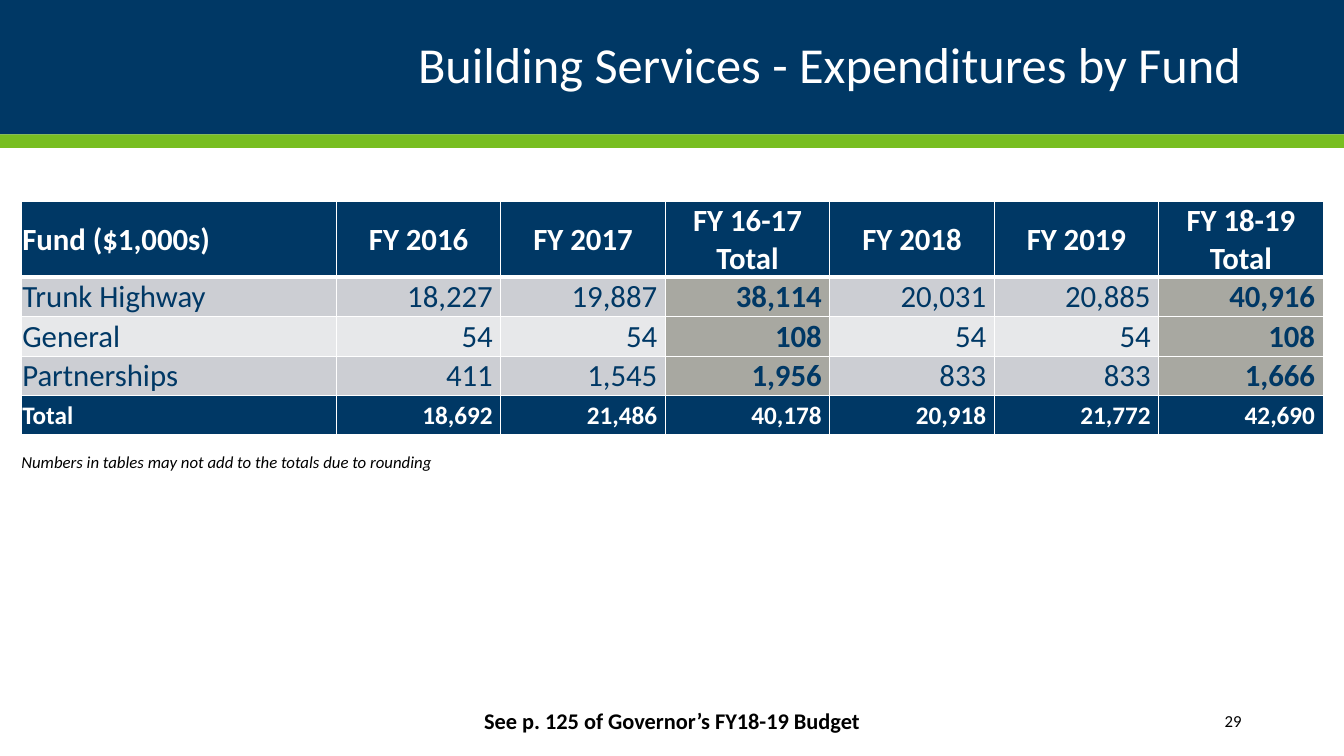
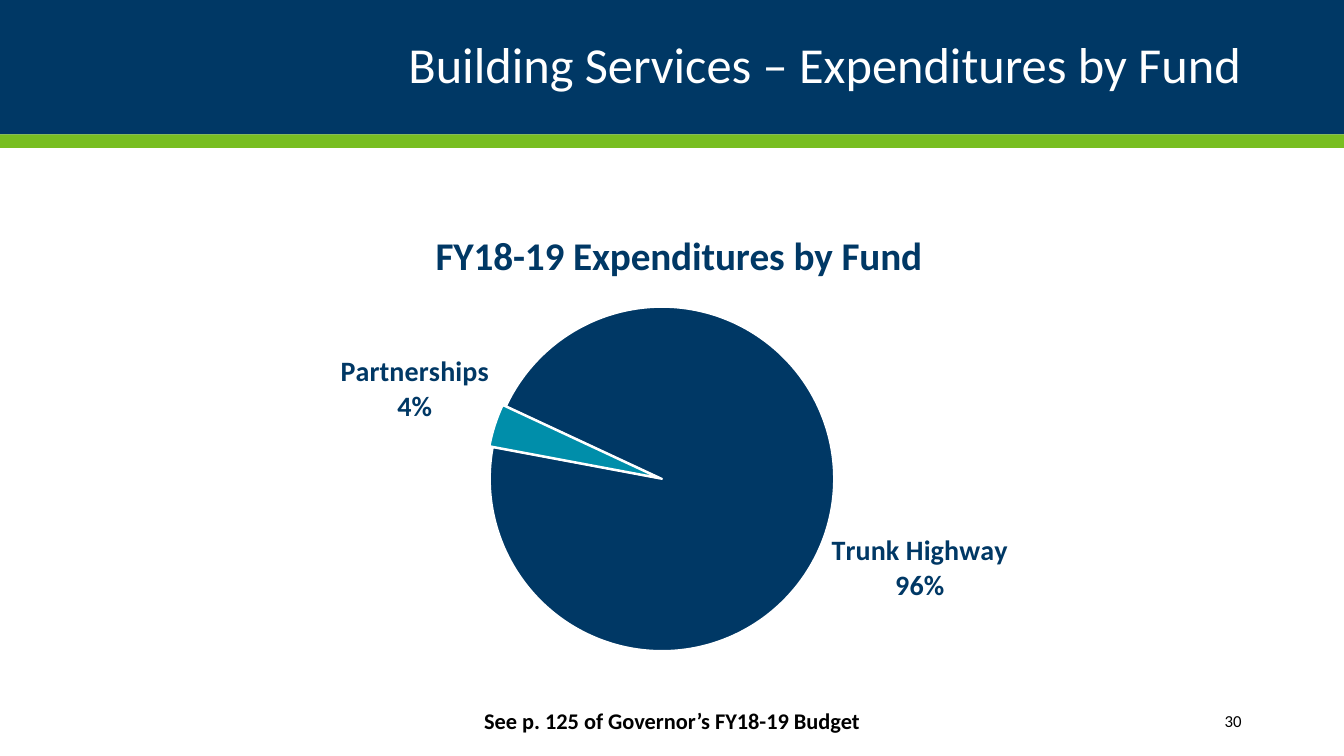
from lxml import etree
from pptx import Presentation
from pptx.chart.data import CategoryChartData
from pptx.dml.color import RGBColor
from pptx.enum.chart import XL_CHART_TYPE, XL_LABEL_POSITION
from pptx.enum.shapes import MSO_SHAPE
from pptx.enum.text import MSO_ANCHOR, PP_ALIGN
from pptx.oxml import parse_xml
from pptx.oxml.ns import nsdecls, qn
from pptx.util import Inches, Pt

PIE = XL_CHART_TYPE.PIE
OUTSIDE_END = XL_LABEL_POSITION.OUTSIDE_END
RECTANGLE = MSO_SHAPE.RECTANGLE
MIDDLE = MSO_ANCHOR.MIDDLE
LEFT, CENTER, RIGHT = PP_ALIGN.LEFT, PP_ALIGN.CENTER, PP_ALIGN.RIGHT

COLORS = {
    "navy": "003865", "green": "78BE21", "teal": "008EAA",
    "white": "FFFFFF", "black": "000000",
    "stripe_dark": "CCCED3", "stripe_light": "E7E8EA", "subtotal": "A8A8A1",
}
FONT = "Calibri"
COLUMNS, ROWS = 80, 45
UNIT = Inches(1) / 6

TITLE_BAND = (0, 0, COLUMNS, 8)
ACCENT_BAND = (0, 8, COLUMNS, 0.8)
TITLE_BOX = (5.5, 1, 69, 6)
SOURCE_BOX = (21.67, 41.7, 36.67, 2.4)
NUMBER_BOX = (64.9, 41.7, 9.6, 2.4)
TABLE_BOX = (1.27, 12, 77.5, 13.9)
NOTE_BOX = (0, 26.28, 27, 2.4)
CHART_BOX = (5.5, 12.06, 69, 28.56)

HEADER = ["Fund ($1,000s)", "FY 2016", "FY 2017", "FY 16-17 Total",
          "FY 2018", "FY 2019", "FY 18-19 Total"]
FUNDS = [
    ["Trunk Highway", "18,227", "19,887", "38,114", "20,031", "20,885", "40,916"],
    ["General", "54", "54", "108", "54", "54", "108"],
    ["Partnerships", "411", "1,545", "1,956", "833", "833", "1,666"],
]
TOTAL = ["Total", "18,692", "21,486", "40,178", "20,918", "21,772", "42,690"]
SUBTOTAL_COLUMNS = (3, 6)
FUND_SHARES = {"Trunk Highway": 96, "General": 0, "Partnerships": 4}
SLICE_COLORS = ("navy", "green", "teal")


def units(*lengths):
    return [round(length * UNIT) for length in lengths]


def rgb(name):
    return RGBColor.from_string(COLORS[name])


def style_font(font, size, color="navy", bold=False, italic=False):
    font.name, font.size = FONT, Pt(size)
    font.bold, font.italic = bold, italic
    font.color.rgb = rgb(color)


def write(frame, text, align=LEFT, spacing=None, **style):
    paragraph = frame.paragraphs[0]
    paragraph.alignment = align
    if spacing:
        paragraph.line_spacing = spacing
    run = paragraph.add_run()
    run.text = text
    style_font(run.font, **style)


def add_text(slide, box, text, **style):
    frame = slide.shapes.add_textbox(*units(*box)).text_frame
    frame.word_wrap = True
    frame.vertical_anchor = MIDDLE
    write(frame, text, **style)


def add_band(slide, box, color):
    band = slide.shapes.add_shape(RECTANGLE, *units(*box))
    band.shadow.inherit = False
    band.fill.solid()
    band.fill.fore_color.rgb = rgb(color)
    band.line.fill.background()


def add_frame(presentation, title, number):
    slide = presentation.slides.add_slide(presentation.slide_layouts[6])
    add_band(slide, TITLE_BAND, "navy")
    add_band(slide, ACCENT_BAND, "green")
    add_text(slide, TITLE_BOX, title, align=RIGHT, spacing=0.9, size=36, color="white")
    add_text(slide, SOURCE_BOX, "See p. 125 of Governor’s FY18-19 Budget",
             align=CENTER, size=16, color="black", bold=True)
    add_text(slide, NUMBER_BOX, number, align=RIGHT, size=12, color="black")
    return slide


def set_borders(cell, **widths):
    properties = cell._tc.get_or_add_tcPr()
    for side in ("L", "R", "T", "B"):
        line = etree.SubElement(properties, qn(f"a:ln{side}"), w=str(Pt(widths.get(side, 1))))
        fill = etree.SubElement(line, qn("a:solidFill"))
        etree.SubElement(fill, qn("a:srgbClr"), val=COLORS["white"])


def fill_cell(cell, text, fill, right_margin, borders, **style):
    cell.margin_left = cell.margin_top = Inches(0.01)
    cell.margin_right, cell.margin_bottom = Inches(right_margin), 0
    cell.vertical_anchor = MIDDLE
    set_borders(cell, **borders)
    cell.fill.solid()
    cell.fill.fore_color.rgb = rgb(fill)
    write(cell.text_frame, text, **style)


def add_fund_table(slide, box):
    records = [HEADER, *FUNDS, TOTAL]
    last = len(records) - 1
    table = slide.shapes.add_table(len(records), len(HEADER), *units(*box)).table
    label_width, header_height = 0.242 * box[2], 0.324 * box[3]
    value_width = (box[2] - label_width) / (len(HEADER) - 1)
    row_height = (box[3] - header_height) / last
    for index, column in enumerate(table.columns):
        column.width = units(value_width if index else label_width)[0]
    for index, row in enumerate(table.rows):
        row.height = units(row_height if index else header_height)[0]
    for row, record in enumerate(records):
        banner = row in (0, last)
        borders = {0: {"B": 3}, 1: {"T": 3}}.get(row, {})
        for column, text in enumerate(record):
            subtotal = column in SUBTOTAL_COLUMNS
            stripe = "stripe_dark" if row % 2 else "stripe_light"
            align = LEFT if column == 0 else RIGHT if row else CENTER
            fill_cell(table.cell(row, column), text,
                      fill="navy" if banner else "subtotal" if subtotal else stripe,
                      right_margin=0.08 if align == RIGHT else 0.01,
                      borders=borders, align=align,
                      size=18 if row == last else 22,
                      color="white" if banner else "navy",
                      bold=banner or subtotal)


def set_layout(element, position, inner=False, **shares):
    for layout in element.findall(qn("c:layout")):
        element.remove(layout)
    target = '<c:layoutTarget val="inner"/>' if inner else ""
    modes = "".join(f'<c:{key}Mode val="edge"/>' for key in ("x", "y"))
    sizes = "".join(f'<c:{key} val="{value}"/>' for key, value in shares.items())
    element.insert(position, parse_xml(
        f'<c:layout {nsdecls("c")}><c:manualLayout>{target}{modes}{sizes}'
        "</c:manualLayout></c:layout>"))


def label_slices(series):
    labels = series.data_labels
    labels.show_value = False
    labels.show_category_name = labels.show_percentage = True
    labels.number_format, labels.number_format_is_linked = "0%", False
    labels.position = OUTSIDE_END
    style_font(labels.font, size=20, bold=True)
    element = series._element.find(qn("c:dLbls"))
    separator = etree.Element(qn("c:separator"))
    separator.text = "\n"
    element.find(qn("c:showBubbleSize")).addnext(separator)
    element.insert(0, parse_xml(
        f'<c:dLbl {nsdecls("c")}><c:idx val="1"/><c:delete val="1"/></c:dLbl>'))


def add_fund_pie(slide, box):
    data = CategoryChartData()
    data.categories = list(FUND_SHARES)
    data.add_series("Series 1", list(FUND_SHARES.values()))
    chart = slide.shapes.add_chart(PIE, *units(*box), data).chart
    style_font(chart.font, size=10)
    chart.has_legend = False
    chart.has_title = True
    write(chart.chart_title.text_frame, "FY18-19 Expenditures by Fund",
          align=CENTER, size=28, bold=True)
    set_layout(chart.chart_title._element, 1, x=0.29, y=0.04)
    plot = chart.plots[0]
    plot.vary_by_categories = True
    set_layout(plot._element.getparent(), 0, inner=True, x=0.34, y=0.21, w=0.3, h=0.73)
    series = plot.series[0]
    for index, color in enumerate(SLICE_COLORS):
        slice_format = series.points[index].format
        slice_format.fill.solid()
        slice_format.fill.fore_color.rgb = rgb(color)
        slice_format.line.color.rgb = rgb("white")
        slice_format.line.width = Pt(1.5)
    label_slices(series)
    explosion = etree.Element(qn("c:explosion"), val="1")
    series._element.find(qn("c:dPt")).addprevious(explosion)
    for angle in plot._element.findall(qn("c:firstSliceAng")):
        plot._element.remove(angle)
    etree.SubElement(plot._element, qn("c:firstSliceAng"), val="295")


def build_table_slide(presentation):
    slide = add_frame(presentation, "Building Services - Expenditures by Fund", "29")
    add_fund_table(slide, TABLE_BOX)
    add_text(slide, NOTE_BOX, "Numbers in tables may not add to the totals due to rounding",
             align=CENTER, size=12, color="black", italic=True)


def build_chart_slide(presentation):
    slide = add_frame(presentation, "Building Services – Expenditures by Fund", "30")
    add_fund_pie(slide, CHART_BOX)


def main():
    presentation = Presentation()
    presentation.slide_width, presentation.slide_height = units(COLUMNS, ROWS)
    build_table_slide(presentation)
    build_chart_slide(presentation)
    presentation.save("out.pptx")


if __name__ == "__main__":
    main()
